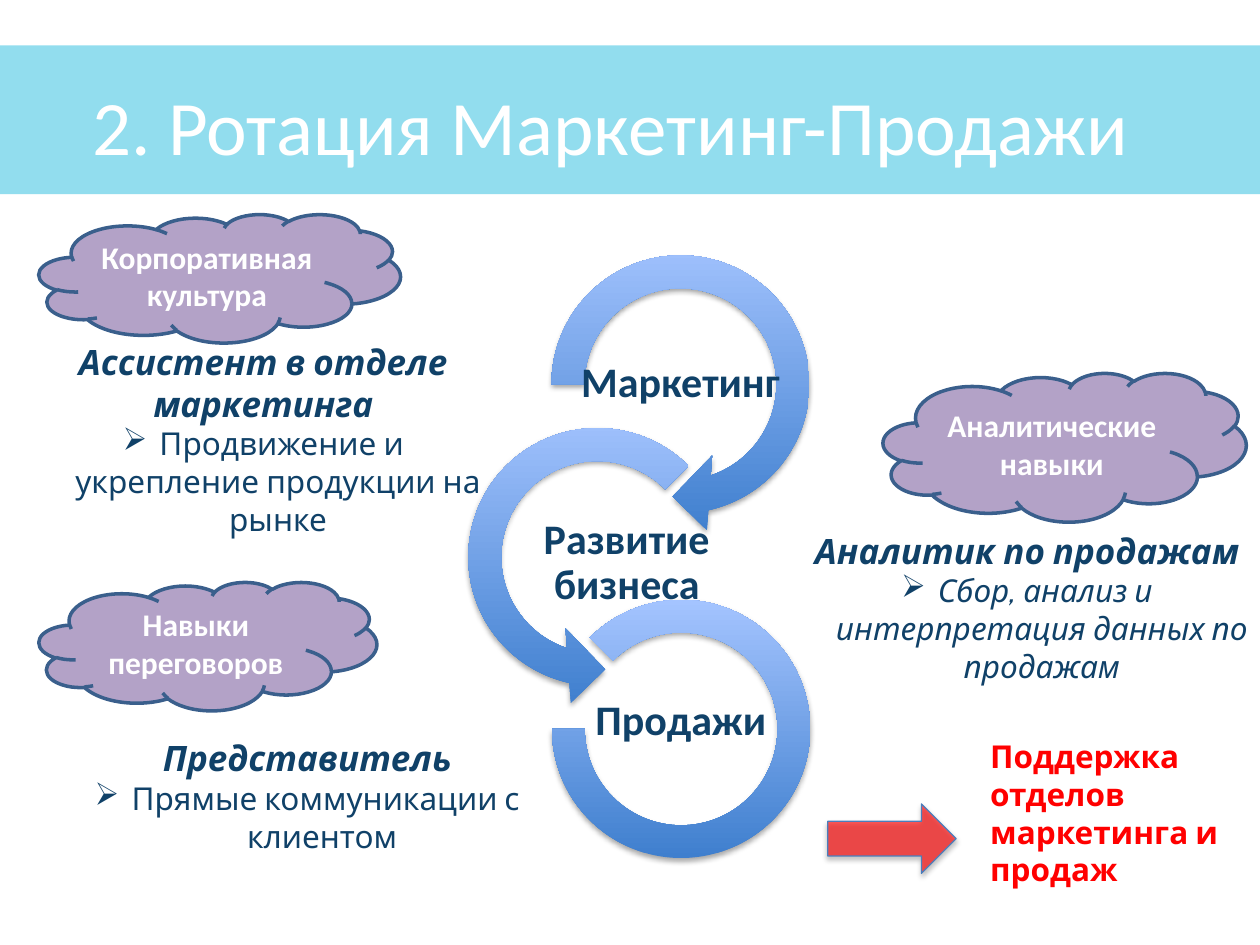
from lxml.etree import SubElement
from pptx import Presentation
from pptx.dml.color import RGBColor
from pptx.enum.shapes import MSO_SHAPE
from pptx.enum.text import MSO_ANCHOR, MSO_AUTO_SIZE, PP_ALIGN
from pptx.oxml.ns import qn
from pptx.util import Pt

NAVY = "104168"
WHITE = "FFFFFF"
RED = "FF0000"


def color(hex_value):
    return RGBColor.from_string(hex_value)


def add_run(paragraph, text, size, font, hex_value, bold=False, italic=False):
    run = paragraph.add_run()
    run.text = text
    run.font.size = Pt(size)
    run.font.name = font
    run.font.color.rgb = color(hex_value)
    run.font.bold = bold
    run.font.italic = italic


def add_figure(slide, preset, box, adjustments=()):
    figure = slide.shapes.add_shape(preset, *map(Pt, box))
    figure.shadow.inherit = False
    figure.line.fill.background()
    for index, value in enumerate(adjustments):
        figure.adjustments[index] = value
    return figure


def set_fill(figure, hex_value, opacity=100):
    figure.fill.solid()
    figure.fill.fore_color.rgb = color(hex_value)
    if opacity < 100:
        tint = figure.fill._xPr.find(qn("a:solidFill"))[0]
        SubElement(tint, qn("a:alpha"), val=str(opacity * 1000))


def set_outline(figure, hex_value, width):
    figure.line.color.rgb = color(hex_value)
    figure.line.width = Pt(width)


def drop_shadow(figure):
    effects = figure._element.spPr.find(qn("a:effectLst"))
    shadow = SubElement(effects, qn("a:outerShdw"), blurRad=str(Pt(3.1)),
                        dist=str(Pt(1.8)), dir="5400000", rotWithShape="0")
    black = SubElement(shadow, qn("a:srgbClr"), val="000000")
    SubElement(black, qn("a:alpha"), val="35000")


def add_text_frame(slide, box):
    frame = slide.shapes.add_textbox(*map(Pt, box)).text_frame
    frame.word_wrap = True
    return frame


def add_title(slide, text):
    band = add_figure(slide, MSO_SHAPE.RECTANGLE, (-8.64, 26, 737.3, 85))
    set_fill(band, "12B7DC", 46)
    title = slide.shapes.title
    title._element.addprevious(band._element)
    title.left, title.top, title.width, title.height = map(Pt, (25.2, 26, 648, 90))
    title.text_frame.vertical_anchor = MSO_ANCHOR.MIDDLE
    heading = title.text_frame.paragraphs[0]
    heading.alignment = PP_ALIGN.CENTER
    add_run(heading, text, 44, "Calibri", WHITE)


def add_stage(slide, preset, ring_box, adjustments, label, label_box):
    ring = add_figure(slide, preset, ring_box, adjustments)
    ring.fill.gradient()
    ring.fill.gradient_angle = 90
    for stop, shade in zip(ring.fill.gradient_stops, ("3F7FCE", "A4C4FF")):
        stop.color.rgb = color(shade)
    drop_shadow(ring)
    frame = add_text_frame(slide, label_box)
    frame.margin_left = frame.margin_right = Pt(1.2)
    frame.margin_top = frame.margin_bottom = Pt(1.2)
    frame.vertical_anchor = MSO_ANCHOR.MIDDLE
    caption = frame.paragraphs[0]
    caption.alignment = PP_ALIGN.CENTER
    caption.line_spacing = 0.9
    add_run(caption, label, 24, "Calibri", NAVY, bold=True)


def add_role(slide, box, role, duty, italic_duty=False):
    frame = add_text_frame(slide, box)
    frame.auto_size = MSO_AUTO_SIZE.SHAPE_TO_FIT_TEXT
    heading = frame.paragraphs[0]
    heading.alignment = PP_ALIGN.CENTER
    add_run(heading, role, 20, "Cabin", NAVY, bold=True, italic=True)
    task = frame.add_paragraph()
    task.alignment = PP_ALIGN.CENTER
    properties = task._p.get_or_add_pPr()
    properties.set("marL", str(Pt(17)))
    properties.set("indent", str(-Pt(17)))
    SubElement(properties, qn("a:buChar"), char="➢")
    add_run(task, duty, 18, "Cabin", NAVY, italic=italic_duty)


def add_skill(slide, box, text):
    cloud = add_figure(slide, MSO_SHAPE.CLOUD, box)
    set_fill(cloud, "B3A2C7")
    set_outline(cloud, "3A5F8C", 2)
    cloud.text_frame.word_wrap = True
    cloud.text_frame.vertical_anchor = MSO_ANCHOR.MIDDLE
    skill = cloud.text_frame.paragraphs[0]
    skill.alignment = PP_ALIGN.CENTER
    add_run(skill, text, 18, "Calibri", WHITE, bold=True)


def add_outcome(slide, text):
    arrow = add_figure(slide, MSO_SHAPE.RIGHT_ARROW, (473, 459.4, 73.4, 39.6))
    set_fill(arrow, RED, 64)
    set_outline(arrow, "4B7EBC", 0.75)
    drop_shadow(arrow)
    frame = add_text_frame(slide, (558.7, 417.6, 190, 94.3))
    frame.auto_size = MSO_AUTO_SIZE.SHAPE_TO_FIT_TEXT
    add_run(frame.paragraphs[0], text, 18, "Cabin", RED, bold=True)


def main():
    deck = Presentation()
    deck.slide_width, deck.slide_height = Pt(720), Pt(540)
    slide = deck.slides.add_slide(deck.slide_layouts[5])
    add_title(slide, "2. Ротация Маркетинг-Продажи")

    add_stage(slide, MSO_SHAPE.CIRCULAR_ARROW, (303.1, 133.9, 171.4, 171.4),
              (0.11, 11.42, 45, 108, 0.125),
              "Маркетинг", (322.6, 195.8, 132.5, 47.5))
    add_stage(slide, MSO_SHAPE.LEFT_CIRCULAR_ARROW, (255.6, 232.6, 171.4, 171.4),
              (0.11, 11.42, 63, 189, 0.125),
              "Развитие бизнеса", (278.6, 298.1, 159.1, 47.5))
    add_stage(slide, MSO_SHAPE.BLOCK_ARC, (315.4, 342.7, 147.6, 147.6),
              (135, 108, 0.127),
              "Продажи", (307.4, 388.8, 163.4, 47.5))

    add_role(slide, (8.6, 190.8, 283.7, 121), "Ассистент в отделе маркетинга",
             " Продвижение и укрепление продукции на рынке")
    add_role(slide, (445, 298.8, 283.7, 97.2), "Аналитик по продажам",
             " Сбор, анализ и интерпретация данных по продажам", italic_duty=True)
    add_role(slide, (33.8, 417.6, 283.7, 74.9), "Представитель",
             " Прямые коммуникации с клиентом")

    add_skill(slide, (504.7, 213.1, 207.4, 85), "Аналитические навыки")
    add_skill(slide, (22.3, 332.6, 193, 73.4), "Навыки переговоров")
    add_skill(slide, (22.3, 122.4, 206.6, 73.4), "Корпоративная культура")

    add_outcome(slide, "Поддержка отделов маркетинга и продаж")
    deck.save("out.pptx")


if __name__ == "__main__":
    main()
